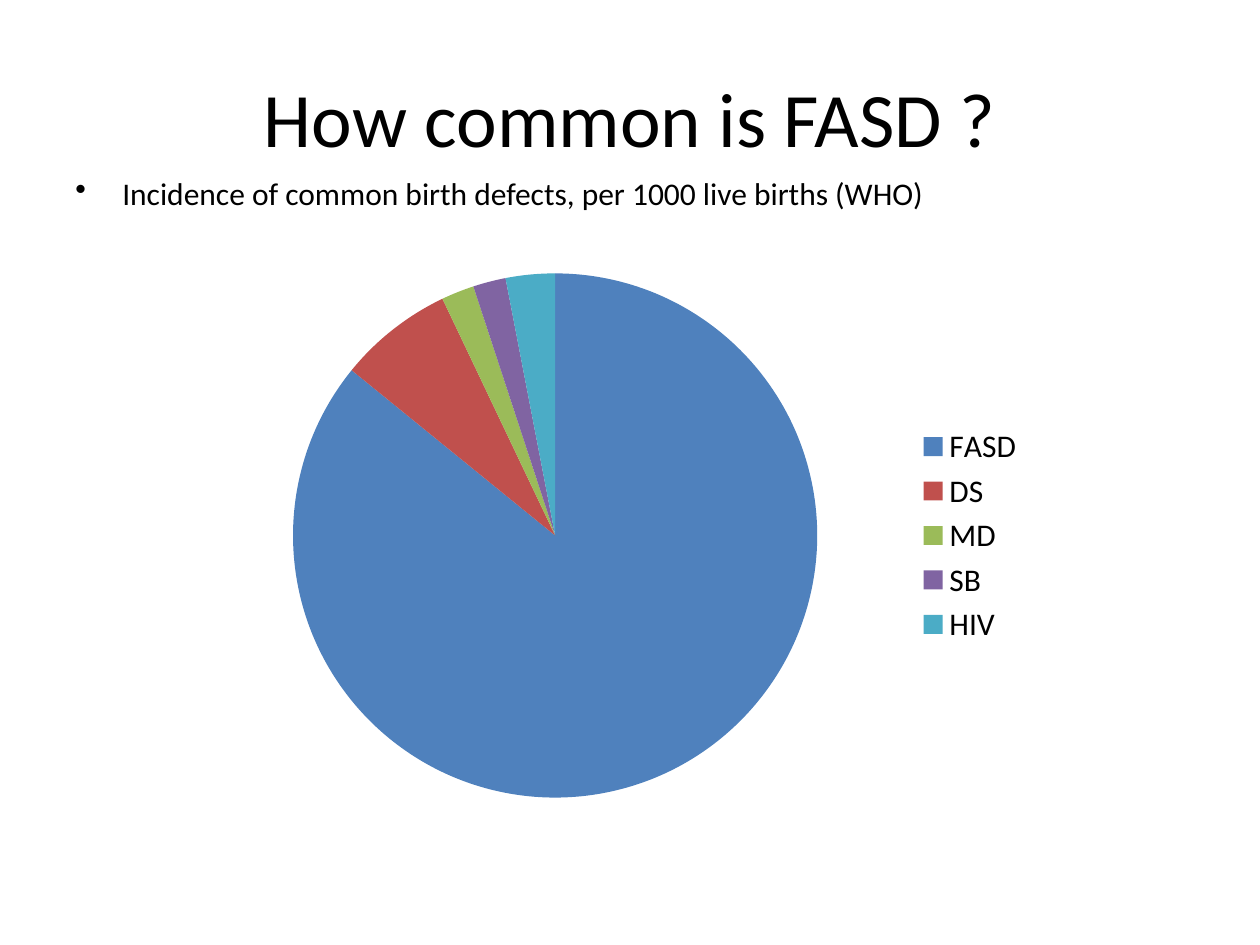
from dataclasses import dataclass

from lxml.etree import SubElement
from pptx import Presentation
from pptx.chart.data import CategoryChartData
from pptx.dml.color import RGBColor
from pptx.enum.chart import XL_CHART_TYPE as ChartType, XL_LEGEND_POSITION as LegendPosition
from pptx.enum.text import MSO_ANCHOR as Anchor, PP_ALIGN as Align
from pptx.oxml.ns import qn
from pptx.util import Emu, Pt

PX_PER_INCH = 126
SLIDE_SIZE = (1260, 945)


def px(length):
    return Emu(round(length * 914400 / PX_PER_INCH))


@dataclass(frozen=True)
class Theme:
    font: str = "Calibri"
    text: str = "000000"
    background: str = "FFFFFF"
    slices: tuple = ("4F81BD", "C0504D", "9BBB59", "8064A2", "4BACC6")
    title_size: int = 44
    body_size: int = 18
    bullet_indent: int = 47


class SlideBuilder:
    def __init__(self, slide, theme):
        self.slide = slide
        self.theme = theme
        background = slide.background.fill
        background.solid()
        background.fore_color.rgb = RGBColor.from_string(theme.background)

    def style_font(self, font, size):
        font.name = self.theme.font
        font.size = Pt(size)
        font.color.rgb = RGBColor.from_string(self.theme.text)

    def text(self, box, wording, size, anchor=Anchor.TOP, align=Align.LEFT):
        shape = self.slide.shapes.add_textbox(*map(px, box))
        frame = shape.text_frame
        frame.word_wrap = True
        frame.vertical_anchor = anchor
        paragraph = frame.paragraphs[0]
        paragraph.text = wording
        paragraph.alignment = align
        self.style_font(paragraph.font, size)
        return paragraph

    def bullet(self, box, wording):
        size = self.theme.body_size
        paragraph = self.text(box, wording, size)
        paragraph.space_before = Pt(size * 0.2)
        properties = paragraph._p.get_or_add_pPr()
        indent = px(self.theme.bullet_indent)
        properties.set("marL", str(indent))
        properties.set("indent", str(-indent))
        # The bullet belongs before the default run properties
        mark = SubElement(properties, qn("a:buChar"), char="•")
        properties.find(qn("a:defRPr")).addprevious(mark)

    def pie(self, box, series_name, values):
        data = CategoryChartData()
        data.categories = values.keys()
        data.add_series(series_name, values.values())
        chart = self.slide.shapes.add_chart(ChartType.PIE, *map(px, box), data).chart
        self.style_font(chart.font, self.theme.body_size)
        chart.has_title = False
        chart.has_legend = True
        chart.legend.position = LegendPosition.RIGHT
        chart.legend.include_in_layout = False
        plot = chart.plots[0]
        plot.vary_by_categories = True
        for index, color in enumerate(self.theme.slices):
            fill = plot.series[0].points[index].format.fill
            fill.solid()
            fill.fore_color.rgb = RGBColor.from_string(color)


def main():
    presentation = Presentation()
    presentation.slide_width, presentation.slide_height = map(px, SLIDE_SIZE)
    theme = Theme()
    builder = SlideBuilder(
        presentation.slides.add_slide(presentation.slide_layouts[6]), theme)

    # Title
    builder.text((63, 38, 1134, 158), "How common is FASD ?",
                 theme.title_size, Anchor.MIDDLE, Align.CENTER)

    # Explanation of the figures
    builder.bullet((63, 168, 1197, 844),
                   "Incidence of common birth defects, per 1000 live births (WHO)")

    # Incidence by condition
    builder.pie((197, 256, 840, 559), "Series 1",
                {"FASD": 85, "DS": 7, "MD": 2, "SB": 2, "HIV": 3})

    presentation.save("out.pptx")


if __name__ == "__main__":
    main()
